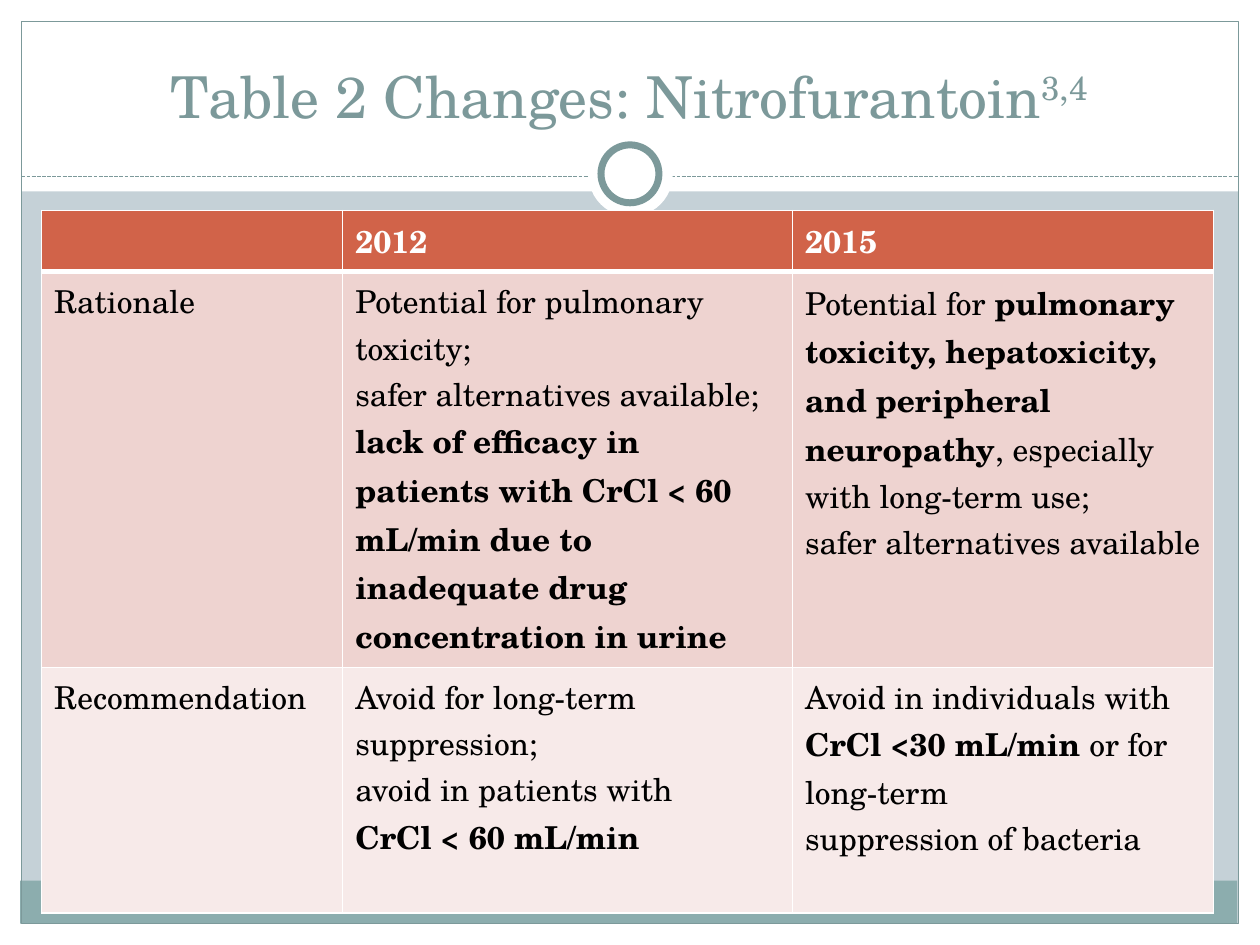
from lxml import etree
from pptx import Presentation
from pptx import util as u
from pptx.dml.color import RGBColor
from pptx.enum import dml, shapes, text
from pptx.oxml import ns

FONT = "TeX Gyre Schola"
COLORS = {
    "background": "C5D1D7", "white": "FFFFFF", "black": "000000",
    "accent": "7C999A", "band": "8CADAE", "header": "D16349",
    "odd": "EED3D0", "even": "F7EAE9",
}
COLUMNS = [2.39, 3.57, 3.34]
ROWS = [0.48, 3.14, 1.95]

# Each cell is a list of paragraphs; a paragraph is a list of (text, bold) runs
CELLS = [
    [[], [[("2012", True)]], [[("2015", True)]]],
    [
        [[("Rationale", False)]],
        [[("Potential for pulmonary toxicity;", False)],
         [("safer alternatives available; ", False),
          ("lack of efficacy in patients with CrCl < 60 mL/min due to "
           "inadequate drug concentration in urine", True)]],
        [[("Potential for ", False),
          ("pulmonary toxicity, hepatoxicity,", True)],
         [("and peripheral neuropathy", True),
          (", especially with long-term use;", False)],
         [("safer alternatives available", False)]],
    ],
    [
        [[("Recommendation", False)]],
        [[("Avoid for long-term", False)],
         [("suppression;", False)],
         [("avoid in patients with", False)],
         [("CrCl < 60 mL/min", True)]],
        [[("Avoid in individuals with ", False),
          ("CrCl <30 mL/min ", True),
          ("or for long-term", False)],
         [("suppression of bacteria", False)]],
    ],
]


def rgb(name):
    return RGBColor.from_string(COLORS[name])


def set_fill(fill, name):
    fill.solid()
    fill.fore_color.rgb = rgb(name)


def add_block(s, kind, left, top, width, height, fill=None, line=None, weight=0.75):
    sp = s.shapes.add_shape(kind, *map(u.Inches, (left, top, width, height)))
    sp.shadow.inherit = False
    if fill:
        set_fill(sp.fill, fill)
    else:
        sp.fill.background()
    if line:
        sp.line.color.rgb = rgb(line)
        sp.line.width = u.Pt(weight)
    else:
        sp.line.fill.background()


def add_rule(s, left, right, top):
    line = s.shapes.add_connector(
        shapes.MSO_CONNECTOR.STRAIGHT,
        u.Inches(left), u.Inches(top), u.Inches(right), u.Inches(top))
    line.line.color.rgb = rgb("accent")
    line.line.width = u.Pt(0.75)
    line.line.dash_style = dml.MSO_LINE.SQUARE_DOT
    etree.SubElement(line._element.spPr, ns.qn("a:effectLst"))


def add_run(p, content, size, color, bold=False):
    r = p.add_run()
    r.text = content
    r.font.name = FONT
    r.font.size = u.Pt(size)
    r.font.bold = bold
    r.font.color.rgb = rgb(color)
    return r


def add_frame(s):
    rect, oval = shapes.MSO_SHAPE.RECTANGLE, shapes.MSO_SHAPE.OVAL
    # White margins and header area
    for box in ((0, 7.33, 10, 0.17), (0, 0, 10, 1.52),
                (0, 0, 0.17, 7.5), (9.83, 0, 0.17, 7.5)):
        add_block(s, rect, *box, fill="white")
    # Bottom band and outline
    add_block(s, rect, 0.16, 6.99, 9.66, 0.34, fill="band")
    add_block(s, rect, 0.17, 0.17, 9.66, 7.16, line="accent")
    # Dashed rule with ring
    add_rule(s, 0.17, 9.83, 1.4)
    add_block(s, oval, 4.67, 1.05, 0.67, 0.67, fill="white")
    add_block(s, oval, 4.77, 1.15, 0.46, 0.46, fill="white", line="accent", weight=4)


def add_title(s):
    sp = s.shapes.title
    sp.left, sp.top, sp.width, sp.height = map(u.Inches, (0.33, 0.25, 9.33, 0.83))
    s.shapes._spTree.append(sp._element)  # in front of the header area
    tf = sp.text_frame
    tf.auto_size = text.MSO_AUTO_SIZE.NONE
    tf.vertical_anchor = text.MSO_ANCHOR.BOTTOM
    p = tf.paragraphs[0]
    p.alignment = text.PP_ALIGN.CENTER
    add_run(p, "Table 2 Changes: Nitrofurantoin", 33, "accent")
    r = add_run(p, "3,4", 33, "accent")
    r.font._element.set("baseline", "30000")


def set_borders(cell, bottom, top):
    tcPr = cell._tc.get_or_add_tcPr()
    widths = (("L", 1), ("R", 1), ("T", top), ("B", bottom))
    for i, (side, width) in enumerate(widths):
        ln = etree.Element(ns.qn(f"a:ln{side}"), w=str(u.Pt(width)))
        fill = etree.SubElement(ln, ns.qn("a:solidFill"))
        etree.SubElement(fill, ns.qn("a:srgbClr"), val=COLORS["white"])
        tcPr.insert(i, ln)


def fill_cell(cell, paragraphs, color):
    tf = cell.text_frame
    for i, runs in enumerate(paragraphs):
        p = tf.add_paragraph() if i else tf.paragraphs[0]
        for content, bold in runs:
            add_run(p, content, 18, color, bold)


def add_changes_table(s):
    table = s.shapes.add_table(
        len(ROWS), len(COLUMNS), u.Inches(0.33), u.Inches(1.67),
        u.Inches(sum(COLUMNS)), u.Inches(sum(ROWS))).table
    for column, width in zip(table.columns, COLUMNS):
        column.width = u.Inches(width)
    for i, height in enumerate(ROWS):
        table.rows[i].height = u.Inches(height)
        for j, paragraphs in enumerate(CELLS[i]):
            cell = table.cell(i, j)
            set_fill(cell.fill, ("header", "odd", "even")[i])
            set_borders(cell, bottom=1 if i else 3, top=3 if i == 1 else 1)
            fill_cell(cell, paragraphs, "black" if i else "white")


def main():
    prs = Presentation()
    prs.slide_width, prs.slide_height = u.Inches(10), u.Inches(7.5)
    s = prs.slides.add_slide(prs.slide_layouts[5])
    set_fill(s.background.fill, "background")
    add_frame(s)
    add_title(s)
    add_changes_table(s)
    prs.save("out.pptx")


if __name__ == "__main__":
    main()
